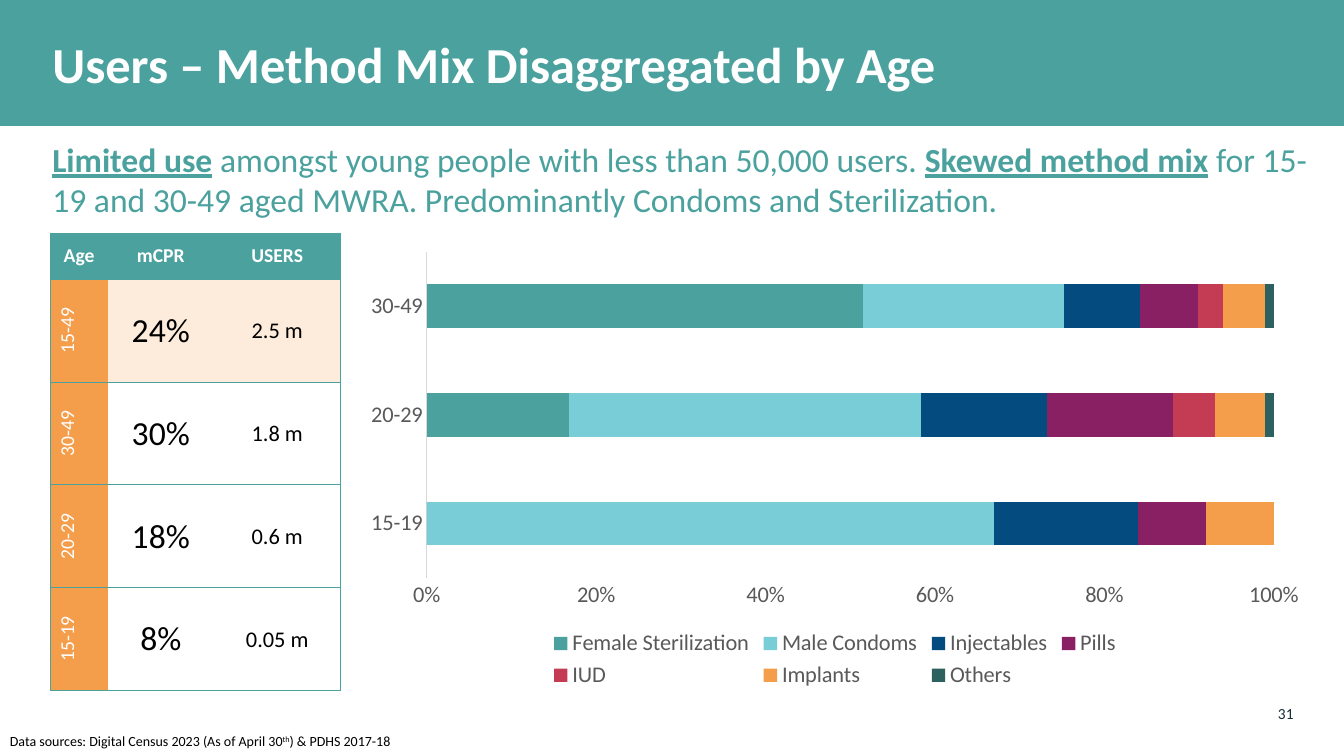
from dataclasses import dataclass

from lxml import etree
from pptx import Presentation
from pptx.chart.data import CategoryChartData
from pptx.dml.color import RGBColor
from pptx.enum.chart import XL_CHART_TYPE, XL_LEGEND_POSITION, XL_TICK_MARK
from pptx.enum.shapes import MSO_SHAPE
from pptx.enum.text import MSO_ANCHOR, PP_ALIGN
from pptx.oxml.ns import qn
from pptx.util import Inches, Pt

STACKED = XL_CHART_TYPE.BAR_STACKED_100
LEGEND_BOTTOM = XL_LEGEND_POSITION.BOTTOM
NO_TICK = XL_TICK_MARK.NONE
RECTANGLE = MSO_SHAPE.RECTANGLE
MIDDLE = MSO_ANCHOR.MIDDLE
LEFT, CENTER, RIGHT = PP_ALIGN.LEFT, PP_ALIGN.CENTER, PP_ALIGN.RIGHT
PLAIN_TABLE_STYLE = "{2D5ABB26-0587-4C30-8999-92F81FD0307C}"


@dataclass(frozen=True)
class Theme:
    font: str = "Calibri"
    teal: str = "4AA19E"
    orange: str = "F49E4C"
    peach: str = "FDECDB"
    white: str = "FFFFFF"
    black: str = "000000"
    axis_text: str = "595959"
    axis_line: str = "D9D9D9"
    page_number: str = "112E38"
    title_size: int = 36
    large_size: int = 24
    chart_size: int = 16
    label_size: int = 14
    number_size: int = 11
    note_size: int = 10


THEME = Theme()

AGE_ROWS = [
    ("15-49", "24%", "2.5 m"),
    ("30-49", "30%", "1.8 m"),
    ("20-29", "18%", "0.6 m"),
    ("15-19", "8%", "0.05 m"),
]
AGE_GROUPS = ["15-19", "20-29", "30-49"]
METHODS = [
    ("Female Sterilization", (0, 17, 52), THEME.teal),
    ("Male Condoms", (67, 42, 24), "78CDD7"),
    ("Injectables", (17, 15, 9), "044B7F"),
    ("Pills", (8, 15, 7), "892064"),
    ("IUD", (0, 5, 3), "C33C54"),
    ("Implants", (8, 6, 5), THEME.orange),
    ("Others", (0, 1, 1), "2C615F"),
]


def inches(*lengths):
    return [Inches(length) for length in lengths]


def set_fill(fill, color):
    fill.solid()
    fill.fore_color.rgb = RGBColor.from_string(color)


def style_font(font, size, color, bold=False):
    font.name = THEME.font
    font.size = Pt(size)
    font.bold = bold
    font.color.rgb = RGBColor.from_string(color)


def add_title(page, text):
    """Fill the title placeholder and lay the teal band behind it."""
    band = page.shapes.add_shape(RECTANGLE, *inches(0, 0, 13.33, 1.25))
    band.shadow.inherit = False
    set_fill(band.fill, THEME.teal)
    band.line.fill.background()
    title = page.shapes.title
    title._element.addprevious(band._element)
    title.left, title.top, title.width, title.height = inches(0.42, 0.08, 12.33, 1.17)
    title.text_frame.text = text
    title.text_frame.vertical_anchor = MIDDLE
    para = title.text_frame.paragraphs[0]
    para.alignment = LEFT
    para.line_spacing = 0.9
    style_font(para.runs[0].font, THEME.title_size, THEME.white, bold=True)


def add_text(page, place, spans, size, color, align=LEFT, wrap=True):
    box = page.shapes.add_textbox(*inches(*place))
    box.text_frame.word_wrap = wrap
    para = box.text_frame.paragraphs[0]
    para.alignment = align
    for text in spans:
        span = para.add_run()
        span.text = text
        style_font(span.font, size, color)
    return box


def add_message(page):
    box = add_text(page, (0.42, 1.33, 12.65, 0.91), [
        "Limited use",
        " amongst young people with less than 50,000 users. ",
        "Skewed method mix",
        " for 15-19 and 30-49 aged MWRA. Predominantly Condoms and Sterilization.",
    ], THEME.large_size, THEME.teal)
    set_fill(box.fill, THEME.white)
    for span in box.text_frame.paragraphs[0].runs[::2]:
        span.font.bold = True
        span.font.underline = True


def add_source_note(page):
    box = add_text(page, (0, 7.22, 4.22, 0.27), [
        "Data sources: Digital Census 2023 (As of April 30", "th", ") & PDHS 2017-18",
    ], THEME.note_size, THEME.black, wrap=False)
    ordinal = box.text_frame.paragraphs[0].runs[1]
    ordinal.font._element.set("baseline", "30000")


def add_page_number(page, number):
    box = add_text(page, (12.34, 6.99, 0.49, 0.2), [number],
                   THEME.number_size, THEME.page_number, RIGHT)
    frame = box.text_frame
    frame.margin_left = frame.margin_right = frame.margin_top = frame.margin_bottom = 0


def add_borders(cell, sides):
    """Draw thin teal lines on the sides given, in the order L, R, T, B."""
    properties = cell._tc.get_or_add_tcPr()
    for side in sides:
        line = etree.SubElement(properties, qn(f"a:ln{side}"), w=str(Pt(0.5)))
        paint = etree.SubElement(line, qn("a:solidFill"))
        etree.SubElement(paint, qn("a:srgbClr"), val=THEME.teal)


def fill_cell(cell, text, size, color, fill, sides, bold=False):
    add_borders(cell, sides)
    set_fill(cell.fill, fill)
    cell.vertical_anchor = MIDDLE
    cell.text_frame.text = text
    para = cell.text_frame.paragraphs[0]
    para.alignment = CENTER
    style_font(para.runs[0].font, size, color, bold)


def add_age_table(page):
    frame = page.shapes.add_table(len(AGE_ROWS) + 1, 3, *inches(0.5, 2.31, 2.88, 4.54))
    table = frame.table
    table.horz_banding = False
    table._tbl.tblPr.find(qn("a:tableStyleId")).text = PLAIN_TABLE_STYLE
    for column, width in zip(table.columns, (0.57, 1.05, 1.26)):
        column.width = Inches(width)
    for index, row in enumerate(table.rows):
        row.height = Inches(1.02 if index else 0.46)

    column_sides = ("LTB", "TB", "RTB")
    for column, heading in enumerate(("Age", "mCPR", "USERS")):
        fill_cell(table.cell(0, column), heading, THEME.label_size, THEME.white,
                  THEME.teal, column_sides[column], bold=True)
    styles = ((THEME.label_size, THEME.white), (THEME.large_size, THEME.black),
              (THEME.chart_size, THEME.black))
    for index, values in enumerate(AGE_ROWS, start=1):
        value_fill = THEME.peach if index == 1 else THEME.white
        for column, text in enumerate(values):
            cell = table.cell(index, column)
            fill = value_fill if column else THEME.orange
            fill_cell(cell, text, *styles[column], fill, column_sides[column])
            if column:
                cell.margin_left = cell.margin_right = cell.margin_top = Inches(0.01)
                cell.margin_bottom = 0
            else:
                cell._tc.tcPr.set("vert", "vert270")


def add_method_chart(page):
    data = CategoryChartData()
    data.categories = AGE_GROUPS
    for name, values, _ in METHODS:
        data.add_series(name, values)
    chart = page.shapes.add_chart(STACKED, *inches(3.49, 2.41, 9.58, 4.47), data).chart
    chart.has_title = False
    style_font(chart.font, THEME.chart_size, THEME.axis_text)
    chart.has_legend = True
    chart.legend.position = LEGEND_BOTTOM
    chart.legend.include_in_layout = False
    style_font(chart.legend.font, THEME.chart_size, THEME.axis_text)

    plot = chart.plots[0]
    plot.gap_width, plot.overlap = 150, 100
    plot.vary_by_categories = False
    for series, (_, _, color) in zip(plot.series, METHODS):
        set_fill(series.format.fill, color)

    for axis in (chart.category_axis, chart.value_axis):
        axis.major_tick_mark = axis.minor_tick_mark = NO_TICK
        axis.has_major_gridlines = False
        style_font(axis.tick_labels.font, THEME.chart_size, THEME.axis_text)
    category_line = chart.category_axis.format.line
    category_line.width = Pt(0.75)
    set_fill(category_line.fill, THEME.axis_line)
    shares = chart.value_axis
    shares.format.line.fill.background()
    shares.minimum_scale, shares.maximum_scale, shares.major_unit = 0, 1, 0.2
    shares.tick_labels.number_format = "0%"
    shares.tick_labels.number_format_is_linked = False


def main():
    deck = Presentation()
    deck.slide_width, deck.slide_height = inches(13.33, 7.5)
    page = deck.slides.add_slide(deck.slide_layouts.get_by_name("Title Only"))
    add_title(page, "Users – Method Mix Disaggregated by Age")
    add_source_note(page)
    add_method_chart(page)
    add_message(page)
    add_age_table(page)
    add_page_number(page, "31")
    deck.save("out.pptx")


if __name__ == "__main__":
    main()
